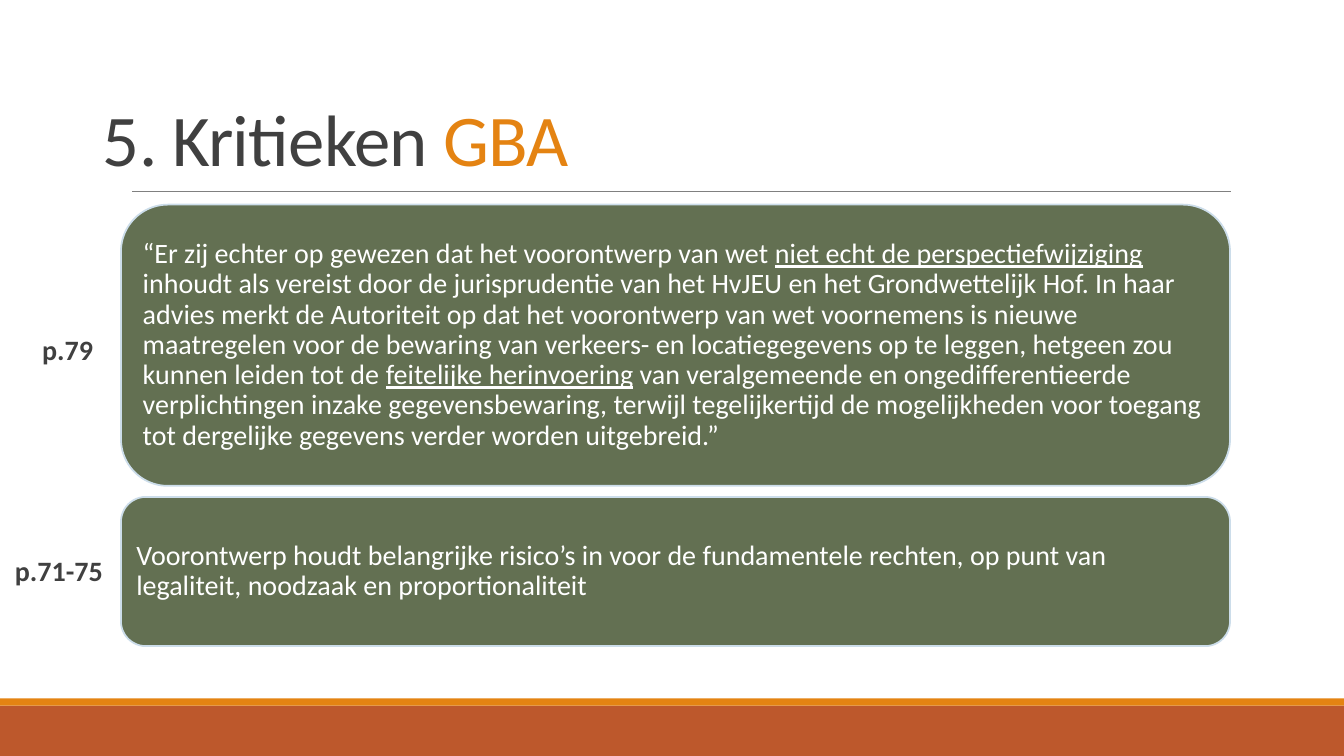
from pptx import Presentation
from pptx.dml.color import RGBColor
from pptx.enum.shapes import MSO_CONNECTOR, MSO_SHAPE
from pptx.enum.text import MSO_ANCHOR, MSO_AUTO_SIZE, PP_ALIGN
from pptx.oxml.ns import qn
from pptx.util import Inches, Pt
from lxml import etree

RECTANGLE = MSO_SHAPE.RECTANGLE
ROUNDED = MSO_SHAPE.ROUNDED_RECTANGLE
STRAIGHT = MSO_CONNECTOR.STRAIGHT
LEFT = PP_ALIGN.LEFT
MIDDLE = MSO_ANCHOR.MIDDLE
BOTTOM = MSO_ANCHOR.BOTTOM
NO_AUTOFIT = MSO_AUTO_SIZE.NONE

TITLE_ONLY = 5
FONT = "Calibri"
DARK, WHITE, GRAY = "404040", "FFFFFF", "808080"
ORANGE, RUST = "E48312", "BD582C"
GREEN, PALE_BLUE = "637052", "CCDDEA"

CARD_LEFT, CARD_WIDTH = 1.2, 11
# Top, height and text runs (text, underlined) of each card
CARDS = [
    (2.03, 2.79, [
        ("“Er zij echter op gewezen dat het voorontwerp van wet ", False),
        ("niet echt de perspectiefwijziging", True),
        (" inhoudt als vereist door de jurisprudentie van het HvJEU en het "
         "Grondwettelijk Hof. In haar advies merkt de Autoriteit op dat het "
         "voorontwerp van wet voornemens is nieuwe maatregelen voor de bewaring "
         "van verkeers- en locatiegegevens op te leggen, hetgeen zou kunnen "
         "leiden tot de ", False),
        ("feitelijke herinvoering", True),
        (" van veralgemeende en ongedifferentieerde verplichtingen inzake "
         "gegevensbewaring, terwijl tegelijkertijd de mogelijkheden voor toegang "
         "tot dergelijke gegevens verder worden uitgebreid.”", False),
    ]),
    (4.93, 1.48, [
        ("Voorontwerp houdt belangrijke risico’s in voor de fundamentele rechten, "
         "op punt van legaliteit, noodzaak en proportionaliteit", False),
    ]),
]
# Left, top, width and text of each page reference
PAGE_LABELS = [(0.32, 3.25, 0.71, "p.79"), (0.05, 5.44, 1.15, "p.71-75")]


def color(hex_string):
    return RGBColor.from_string(hex_string)


def add_run(paragraph, text, size=20, fill=DARK, bold=False, underline=False,
            spacing=0):
    run = paragraph.add_run()
    run.text = text
    run.font.name = FONT
    run.font.size = Pt(size)
    run.font.bold = bold
    run.font.underline = underline
    run.font.color.rgb = color(fill)
    if spacing:
        run.font._element.set("spc", str(int(spacing * 100)))


def add_box(slide, kind, left, top, width, height, fill, line=None):
    shape = slide.shapes.add_shape(
        kind, Inches(left), Inches(top), Inches(width), Inches(height))
    shape.shadow.inherit = False
    shape.fill.solid()
    shape.fill.fore_color.rgb = color(fill)
    if line:
        shape.line.color.rgb = color(line)
        shape.line.width = Pt(1.25)
    else:
        shape.line.fill.background()
    return shape


def add_rule(slide, left, right, top):
    rule = slide.shapes.add_connector(
        STRAIGHT, Inches(left), Inches(top), Inches(right), Inches(top))
    rule.line.color.rgb = color(GRAY)
    rule.line.width = Pt(0.5)
    etree.SubElement(rule._element.spPr, qn("a:effectLst"))


def set_title(slide):
    title = slide.shapes.title
    title.left, title.top = Inches(0.92), Inches(0.61)
    title.width, title.height = Inches(11.5), Inches(1.24)
    frame = title.text_frame
    frame.vertical_anchor = BOTTOM
    frame.auto_size = NO_AUTOFIT
    paragraph = frame.paragraphs[0]
    paragraph.alignment = LEFT
    paragraph.line_spacing = 0.85
    add_run(paragraph, "5. Kritieken ", size=52, spacing=-0.5)
    add_run(paragraph, "GBA", size=52, fill=ORANGE, spacing=-0.5)


def add_card(slide, top, height, runs):
    card = add_box(slide, ROUNDED, CARD_LEFT, top, CARD_WIDTH, height,
                   GREEN, PALE_BLUE)
    frame = card.text_frame
    frame.word_wrap = True
    frame.vertical_anchor = MIDDLE
    frame.margin_left = frame.margin_right = Inches(0.08)
    frame.margin_top = frame.margin_bottom = Inches(0.08)
    paragraph = frame.paragraphs[0]
    paragraph.alignment = LEFT
    paragraph.line_spacing = 0.9
    for text, underline in runs:
        add_run(paragraph, text, fill=WHITE, underline=underline)


def add_page_label(slide, left, top, width, text):
    label = slide.shapes.add_textbox(
        Inches(left), Inches(top), Inches(width), Inches(0.44))
    add_run(label.text_frame.paragraphs[0], text, bold=True)


def main():
    presentation = Presentation()
    presentation.slide_width = Inches(13.33)
    presentation.slide_height = Inches(7.5)
    slide = presentation.slides.add_slide(presentation.slide_layouts[TITLE_ONLY])

    # Footer bands and title rule
    add_box(slide, RECTANGLE, 0, 7, 13.33, 0.5, RUST)
    add_box(slide, RECTANGLE, 0, 6.93, 13.33, 0.07, ORANGE)
    add_rule(slide, 1.31, 12.21, 1.9)

    # Title, cards and page references
    set_title(slide)
    for card in CARDS:
        add_card(slide, *card)
    for label in PAGE_LABELS:
        add_page_label(slide, *label)

    presentation.save("out.pptx")


if __name__ == "__main__":
    main()
